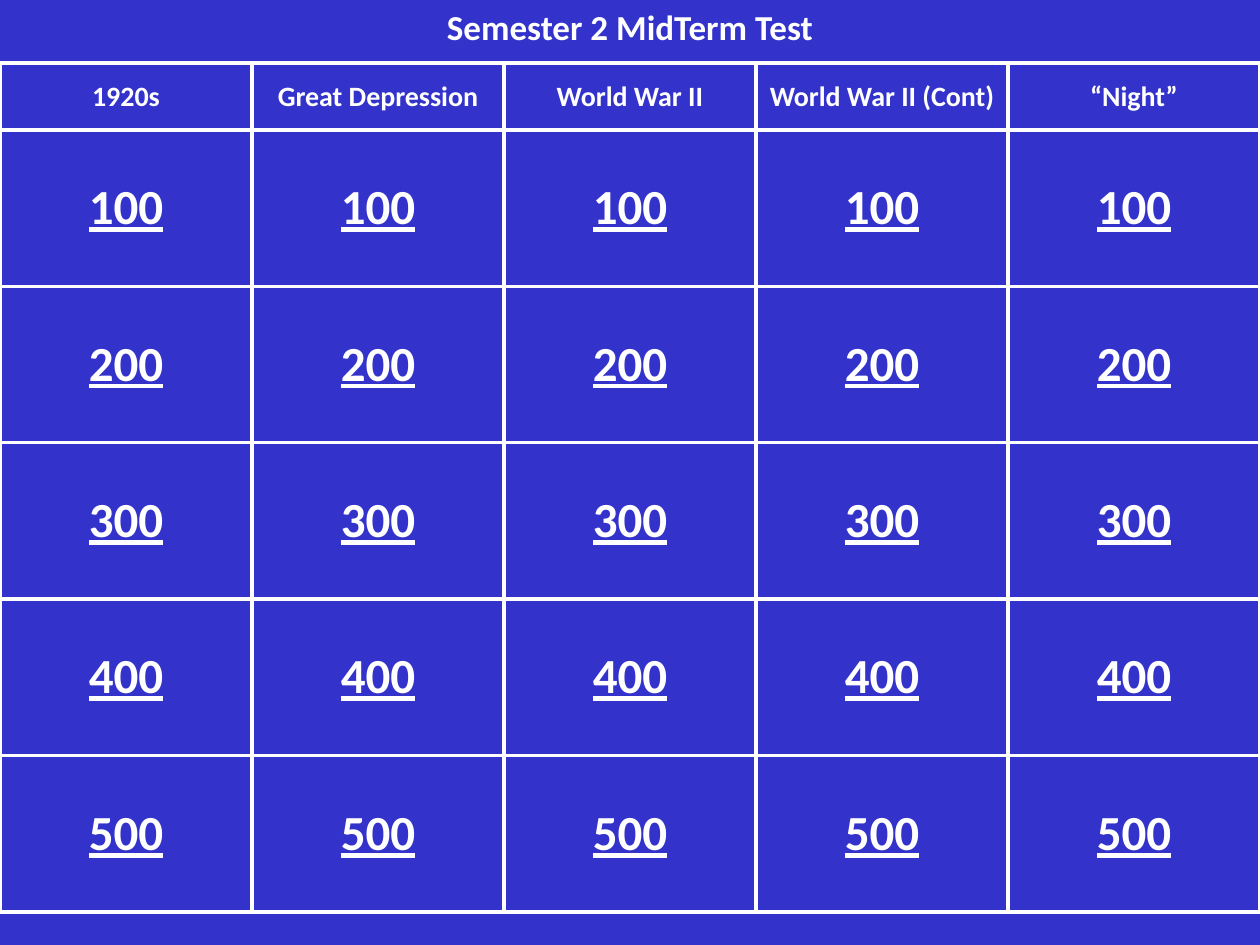
from lxml.etree import fromstring
from pptx import Presentation
from pptx.dml.color import RGBColor
from pptx.enum.text import MSO_ANCHOR, PP_ALIGN
from pptx.oxml.ns import nsdecls
from pptx.util import Pt

TITLE = "Semester 2 MidTerm Test"
CATEGORIES = ["1920s", "Great Depression", "World War II", "World War II (Cont)", "“Night”"]
POINTS = [100, 200, 300, 400, 500]
COLORS = {"board": "3333CC", "text": "FFFFFF", "grid": "FFFFFF"}
FONT = "Calibri"
WIDTH, HEIGHT = 720, 540
TABLE_TOP, HEADER_HEIGHT, POINTS_HEIGHT = 36, 38.2, 89.4
BORDER_WIDTH = 2.25


def write(tf, text, size, underline=False):
    tf.text = text
    p = tf.paragraphs[0]
    p.alignment = PP_ALIGN.CENTER
    font = p.runs[0].font
    font.name, font.size, font.bold = FONT, Pt(size), True
    font.color.rgb = RGBColor.from_string(COLORS["text"])
    if underline:
        font.underline = True
    return p


def add_borders(cell):
    tcPr = cell._tc.get_or_add_tcPr()
    for i, side in enumerate(("lnL", "lnR", "lnT", "lnB")):
        tcPr.insert(i, fromstring(
            f'<a:{side} {nsdecls("a")} w="{Pt(BORDER_WIDTH)}"><a:solidFill>'
            f'<a:srgbClr val="{COLORS["grid"]}"/></a:solidFill></a:{side}>'))


def add_board(slide):
    rows = [CATEGORIES] + [[str(n)] * len(CATEGORIES) for n in POINTS]
    heights = [HEADER_HEIGHT] + [POINTS_HEIGHT] * len(POINTS)
    table = slide.shapes.add_table(len(rows), len(CATEGORIES), 0, Pt(TABLE_TOP),
                                   Pt(WIDTH), Pt(sum(heights))).table
    for i, (texts, height) in enumerate(zip(rows, heights)):
        table.rows[i].height = Pt(height)
        size = 28 if i else 16
        for j, text in enumerate(texts):
            cell = table.cell(i, j)
            cell.vertical_anchor = MSO_ANCHOR.MIDDLE
            cell.fill.solid()
            cell.fill.fore_color.rgb = RGBColor.from_string(COLORS["board"])
            p = write(cell.text_frame, text, size, underline=i > 0)
            p.space_before = Pt(size * 0.2)
            add_borders(cell)


def add_title(slide):
    tf = slide.shapes.add_textbox(Pt(54), 0, Pt(612), Pt(30)).text_frame
    tf.word_wrap = True
    tf.vertical_anchor = MSO_ANCHOR.MIDDLE
    write(tf, TITLE, 20)


def main():
    prs = Presentation()
    prs.slide_width, prs.slide_height = Pt(WIDTH), Pt(HEIGHT)
    slide = prs.slides.add_slide(prs.slide_layouts[6])
    slide.background.fill.solid()
    slide.background.fill.fore_color.rgb = RGBColor.from_string(COLORS["board"])
    add_board(slide)
    add_title(slide)
    prs.save("out.pptx")


if __name__ == "__main__":
    main()
